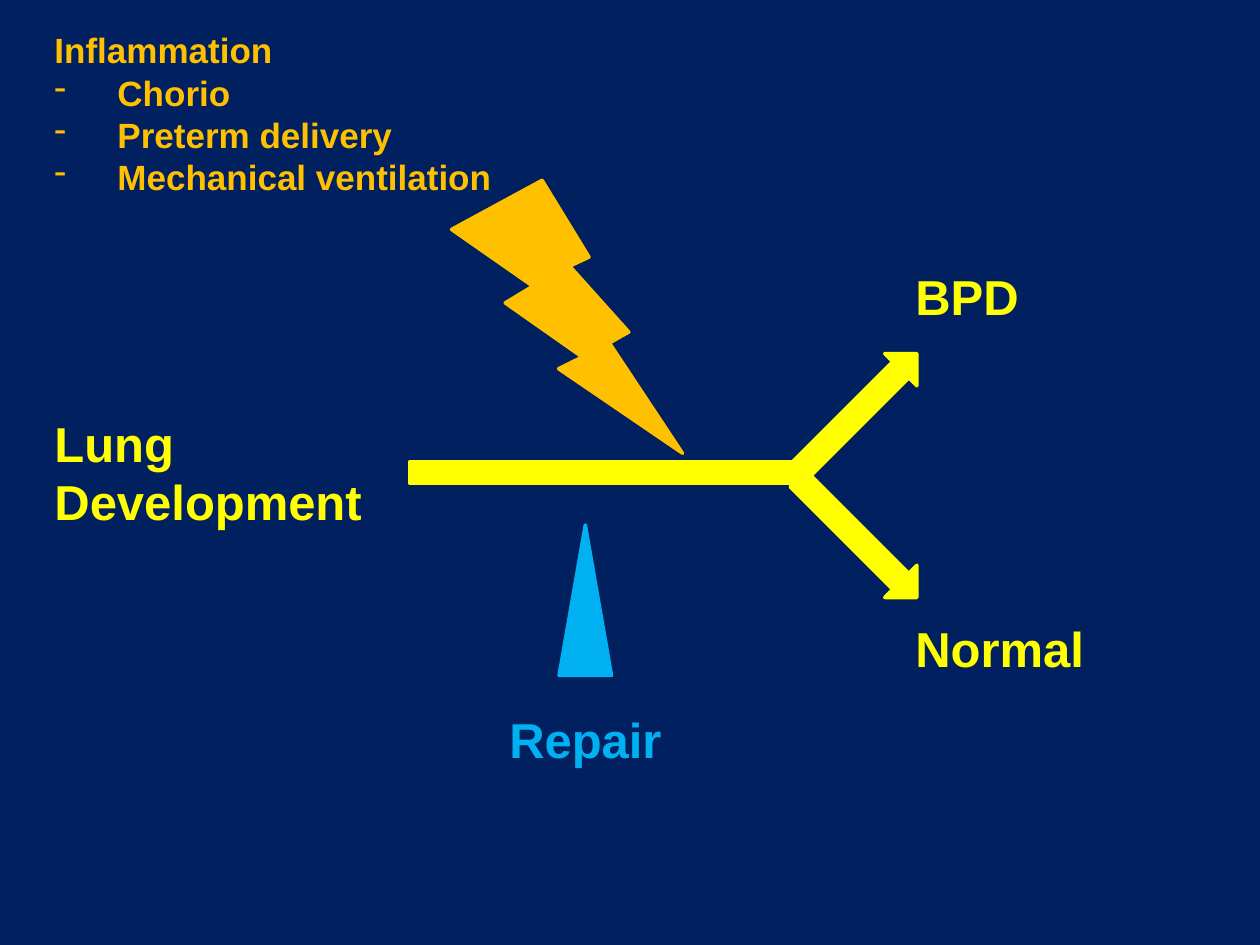
import pptx
import pptx.util
import pptx.dml.color
import pptx.enum.shapes
import pptx.enum.text
import pptx.oxml
import lxml.etree

Pt = pptx.util.Pt
Kind = pptx.enum.shapes.MSO_SHAPE
Align = pptx.enum.text.PP_ALIGN
COLORS = {"navy": "002060", "lung": "FFFF00", "harm": "FFC000", "heal": "00B0F0"}


def color(name):
    """Return the named colour."""
    return pptx.dml.color.RGBColor.from_string(COLORS[name])


def add_text(slide, box, lines, tint, size=28, align=Align.LEFT):
    """Add bold text, one paragraph a line, and return its paragraphs."""
    frame = slide.shapes.add_textbox(*map(Pt, box)).text_frame
    frame.word_wrap = True
    frame.text = "\n".join(lines)
    for para in frame.paragraphs:
        para.alignment = align
        para.font.name = "Arial"
        para.font.size = Pt(size)
        para.font.bold = True
        para.font.color.rgb = color(tint)
    return frame.paragraphs


def add_solid(slide, kind, box, tint, turn=0):
    """Add a preset shape with fill and outline in one colour."""
    shape = slide.shapes.add_shape(kind, *map(Pt, box))
    shape.rotation = turn
    shape.shadow.inherit = False
    shape.fill.solid()
    shape.fill.fore_color.rgb = color(tint)
    shape.line.color.rgb = color(tint)
    shape.line.width = Pt(2)


def add_dash(para, indent):
    """Give a paragraph a dash bullet with a hanging indent."""
    props = para._p.get_or_add_pPr()
    props.set("marL", str(Pt(indent)))
    props.set("indent", str(-Pt(indent)))
    bullet = lxml.etree.SubElement(props, pptx.oxml.ns.qn("a:buChar"))
    bullet.set("char", "-")


def add_path(slide, left, top):
    """Draw lung development forking into its two outcomes."""
    add_text(slide, (left, top + 83.5, 198, 75), ["Lung Development"], "lung")
    add_solid(slide, Kind.RECTANGLE, (left + 210, top + 115, 228, 12), "lung")
    forks = (("BPD", 0, 74, -45), ("Normal", 201, 145.5, 45))
    for label, drop, fall, turn in forks:
        arrow = (left + 418, top + fall, 96, 26)
        add_solid(slide, Kind.RIGHT_ARROW, arrow, "lung", turn)
        add_text(slide, (left + 492, top + drop, 198, 41), [label], "lung")


def add_harm(slide, left, top):
    """Draw the bolt of inflammation and list its causes."""
    bolt = (left + 234, top + 90, 132, 156)
    add_solid(slide, Kind.LIGHTNING_BOLT, bolt, "harm")
    lines = ["Inflammation", "Chorio", "Preterm delivery", "Mechanical ventilation"]
    paras = add_text(slide, (left, top, 312, 104.5), lines, "harm", 20)
    for para in paras[1:]:
        add_dash(para, 36)


def add_heal(slide, left, top, width):
    """Draw the wedge of repair centred above its label."""
    wedge = (left + (width - 30) / 2, top, 30, 86)
    add_solid(slide, Kind.FLOWCHART_EXTRACT, wedge, "heal")
    label = (left, top + 102, width, 41)
    add_text(slide, label, ["Repair"], "heal", align=Align.CENTER)


def main():
    """Build and save the slide."""
    deck = pptx.Presentation()
    deck.slide_width, deck.slide_height = Pt(720), Pt(540)
    slide = deck.slides.add_slide(deck.slide_layouts[6])
    slide.background.fill.solid()
    slide.background.fill.fore_color.rgb = color("navy")
    add_path(slide, 24, 149)
    add_harm(slide, 24, 13)
    add_heal(slide, 269, 300, 131)
    deck.save("out.pptx")


if __name__ == "__main__":
    main()
